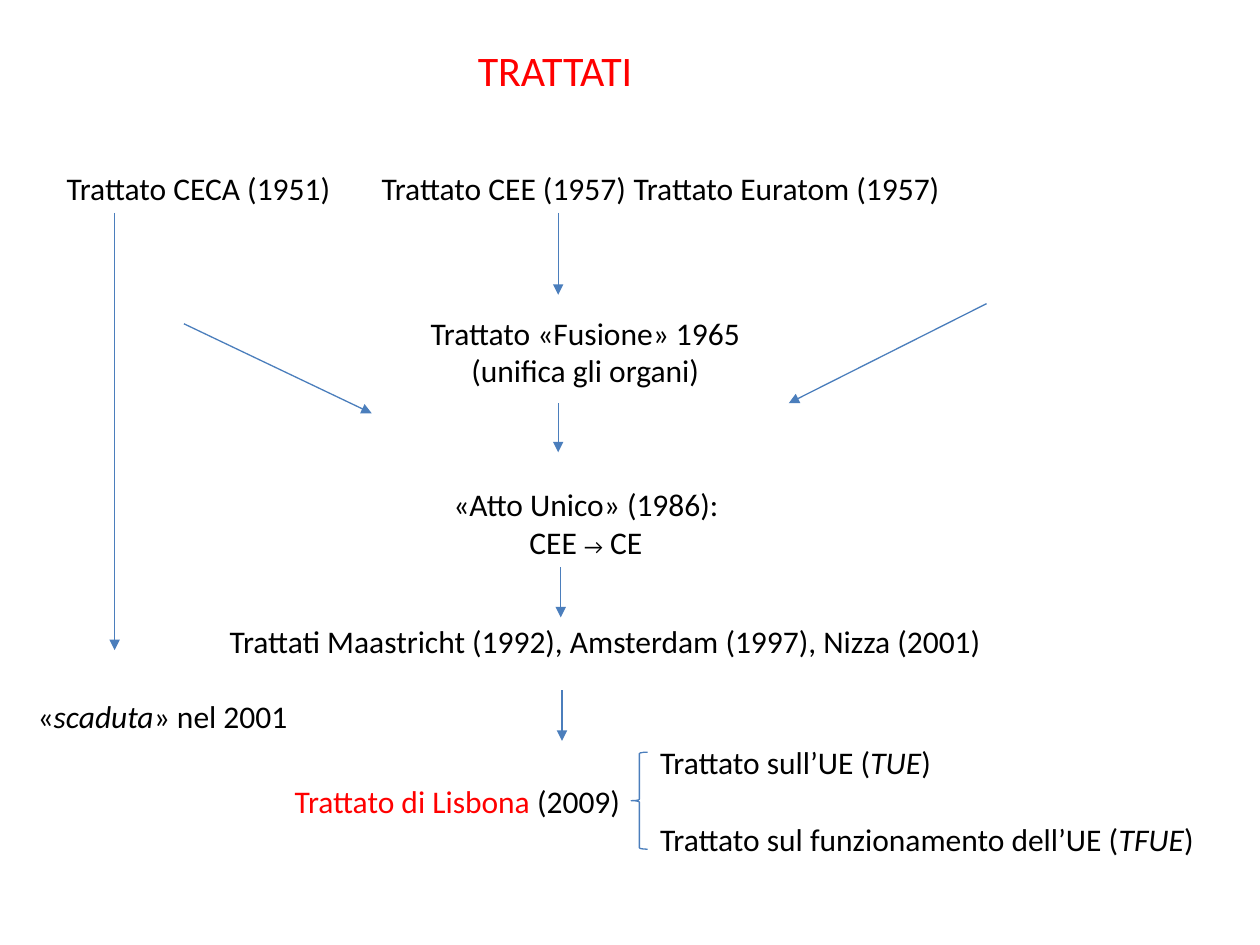
"""Build a one-slide diagram of the treaties leading to the Treaty of Lisbon."""
from lxml import etree
from pptx import Presentation
from pptx import util as u
from pptx.dml.color import RGBColor
from pptx.enum import shapes, text
from pptx.oxml.ns import qn

RED = RGBColor(0xFF, 0x00, 0x00)
BLACK = RGBColor(0x00, 0x00, 0x00)
BLUE = RGBColor(0x4B, 0x7E, 0xBC)
FONT = "Calibri"
CENTER = text.PP_ALIGN.CENTER
MIDDLE = text.MSO_ANCHOR.MIDDLE
ITALIC = {"italic": True}

TITLE = ((2.24, 0.3, 4.33, 0.5), [["TRATTATI"]])
TREATIES = [
    ((0.43, 1.29, 8.74, 0.4),
     [["Trattato CECA (1951)\tTrattato CEE (1957) \tTrattato Euratom (1957)"]], {}),
    ((3.19, 2.44, 2.91, 0.71),
     [["Trattato «Fusione» 1965 (unifica gli organi)"]], {"align": CENTER}),
    ((3.35, 3.8, 2.6, 0.71),
     [["«Atto Unico» (1986): CEE ", ("→", {"size": 12}), " CE"]], {"align": CENTER}),
    ((0.59, 4.89, 8.43, 0.4),
     [["Trattati Maastricht (1992), Amsterdam (1997), Nizza (2001)"]], {"align": CENTER}),
    ((2.24, 5.85, 3.15, 1.01),
     [[("Trattato di Lisbona", {"color": RED}), " (2009)"]], {"anchor": MIDDLE}),
    ((5.14, 5.85, 4.45, 1.01),
     [["Trattato sull’UE (", ("TUE", ITALIC), ")"],
      ["Trattato sul funzionamento dell’UE (", ("TFUE", ITALIC), ")"]], {"gap": 22}),
    ((0.2, 5.48, 3.15, 0.4),
     [["«", ("scaduta", ITALIC), "» nel 2001"]], {}),
]
ARROWS = [
    ((1.46, 2.57), (2.95, 3.28)),
    ((7.83, 2.41), (6.26, 3.2)),
    ((4.43, 1.69), (4.43, 2.34)),
    ((4.43, 3.2), (4.43, 3.59)),
    ((4.45, 4.5), (4.45, 4.9)),
    ((4.46, 5.48), (4.46, 5.88)),
    ((0.91, 1.69), (0.91, 5.16)),
]
BRACE = (5.01, 5.97, 0.13, 0.77)


def inches(values):
    return [u.Inches(value) for value in values]


def write(box, paragraphs, size=18, color=BLACK, align=text.PP_ALIGN.LEFT,
          anchor=text.MSO_ANCHOR.TOP, gap=0):
    frame = box.text_frame
    frame.word_wrap = True
    frame.auto_size = text.MSO_AUTO_SIZE.NONE
    frame.vertical_anchor = anchor
    for index, spans in enumerate(paragraphs):
        para = frame.add_paragraph() if index else frame.paragraphs[0]
        para.alignment = align
        para.space_before = u.Pt(gap if index else 0)
        for item in spans:
            words, style = (item, {}) if isinstance(item, str) else item
            span = para.add_run()
            span.text = words
            span.font.name = FONT
            span.font.size = u.Pt(style.get("size", size))
            span.font.italic = style.get("italic", False)
            span.font.color.rgb = style.get("color", color)


def add_arrow(page, start, end):
    arrow = page.shapes.add_connector(
        shapes.MSO_CONNECTOR.STRAIGHT, *inches(start + end))
    arrow.line.color.rgb = BLUE
    arrow.line.width = u.Pt(0.75)
    etree.SubElement(arrow.line._get_or_add_ln(), qn("a:tailEnd"), type="triangle")
    etree.SubElement(arrow._element.spPr, qn("a:effectLst"))


def main():
    deck = Presentation()
    deck.slide_width, deck.slide_height = inches((10, 7.5))
    page = deck.slides.add_slide(deck.slide_layouts[5])

    place, words = TITLE
    title = page.shapes.title
    title.left, title.top, title.width, title.height = inches(place)
    write(title, words, size=24, color=RED, align=CENTER)

    for place, words, style in TREATIES:
        write(page.shapes.add_textbox(*inches(place)), words, **style)
    for start, end in ARROWS:
        add_arrow(page, start, end)

    brace = page.shapes.add_shape(shapes.MSO_SHAPE.LEFT_BRACE, *inches(BRACE))
    brace.shadow.inherit = False
    brace.fill.background()
    brace.line.color.rgb = BLUE
    brace.line.width = u.Pt(0.75)

    deck.save("out.pptx")


if __name__ == "__main__":
    main()
